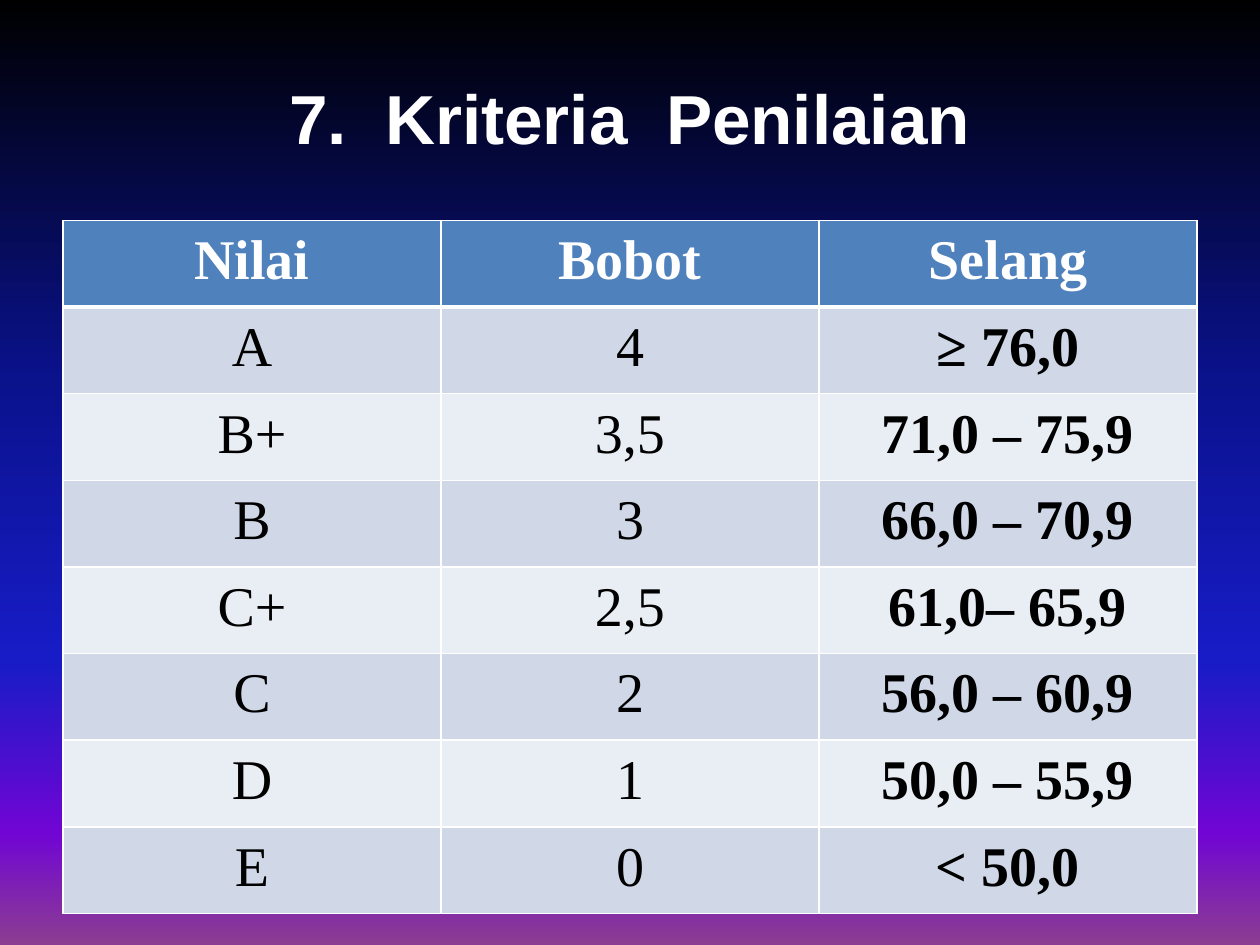
from lxml import etree
from pptx import Presentation
from pptx.dml.color import RGBColor
from pptx.enum import text
from pptx.oxml.ns import qn
from pptx.util import Inches, Pt

COLORS = {
    "white": "FFFFFF", "black": "000000", "head": "4F81BD",
    "odd": "D0D8E8", "even": "E9EDF4",
}
SKY = [(0, "000000"), (40, "0A128C"), (70, "181CC7"), (88, "7005D4"), (100, "8C3D91")]
GRADES = [
    ("Nilai", "Bobot", "Selang"),
    ("A", "4", "≥ 76,0"),
    ("B+", "3,5", "71,0 – 75,9"),
    ("B", "3", "66,0 – 70,9"),
    ("C+", "2,5", "61,0– 65,9"),
    ("C", "2", "56,0 – 60,9"),
    ("D", "1", "50,0 – 55,9"),
    ("E", "0", "< 50,0"),
]


def color(name):
    return RGBColor.from_string(COLORS[name])


def paint_sky(slide):
    """Fill the background with a gradient from top to bottom."""
    fill = slide.background.fill
    fill.gradient()
    fill.gradient_angle = 270
    stops = next(slide.element.iter(qn("a:gsLst")))
    for stop in list(stops):
        stops.remove(stop)
    for place, tone in SKY:
        stop = etree.SubElement(stops, qn("a:gs"), pos=str(place * 1000))
        etree.SubElement(stop, qn("a:srgbClr"), val=tone)


def write(frame, words, font, size, tone, bold):
    """Put one centred run into the frame and return its paragraph."""
    para = frame.paragraphs[0]
    para.alignment = text.PP_ALIGN.CENTER
    run = para.add_run()
    run.text = words
    run.font.name = font
    run.font.size = Pt(size)
    run.font.bold = bold
    run.font.color.rgb = color(tone)
    return para


def add_title(slide, words):
    box = slide.shapes.add_textbox(Inches(0.5), Inches(0.3), Inches(9), Inches(1.25))
    frame = box.text_frame
    frame.word_wrap = True
    frame.vertical_anchor = text.MSO_ANCHOR.MIDDLE
    write(frame, words, "Arial", 39.6, "white", True)


def set_edges(cell, widths):
    """Draw white borders; widths are points for left, right, top, bottom."""
    props = cell._tc.get_or_add_tcPr()
    for spot, (side, width) in enumerate(zip("LRTB", widths)):
        line = etree.Element(qn(f"a:ln{side}"), w=str(Pt(width)))
        fill = etree.SubElement(line, qn("a:solidFill"))
        etree.SubElement(fill, qn("a:srgbClr"), val=COLORS["white"])
        props.insert(spot, line)


def fill_cell(cell, words, row, col):
    head = row == 0
    cell.margin_left = cell.margin_right = Inches(0.07)
    cell.margin_top = cell.margin_bottom = 0
    cell.fill.solid()
    cell.fill.fore_color.rgb = color("head" if head else "odd" if row % 2 else "even")
    tone = "white" if head else "black"
    para = write(cell.text_frame, words, "Times New Roman", 32, tone, head or col == 2)
    para.line_spacing = 1.15
    set_edges(cell, (1, 1, 3 if row == 1 else 1, 3 if head else 1))


def add_grades(slide):
    frame = slide.shapes.add_table(len(GRADES), len(GRADES[0]), Inches(0.5),
                                   Inches(1.75), Inches(9), Inches(5.5))
    for row, line in enumerate(GRADES):
        for col, words in enumerate(line):
            fill_cell(frame.table.cell(row, col), words, row, col)


def main():
    deck = Presentation()
    deck.slide_width, deck.slide_height = Inches(10), Inches(7.5)
    slide = deck.slides.add_slide(deck.slide_layouts[6])
    paint_sky(slide)
    add_title(slide, "7.  Kriteria  Penilaian")
    add_grades(slide)
    deck.save("out.pptx")


if __name__ == "__main__":
    main()
